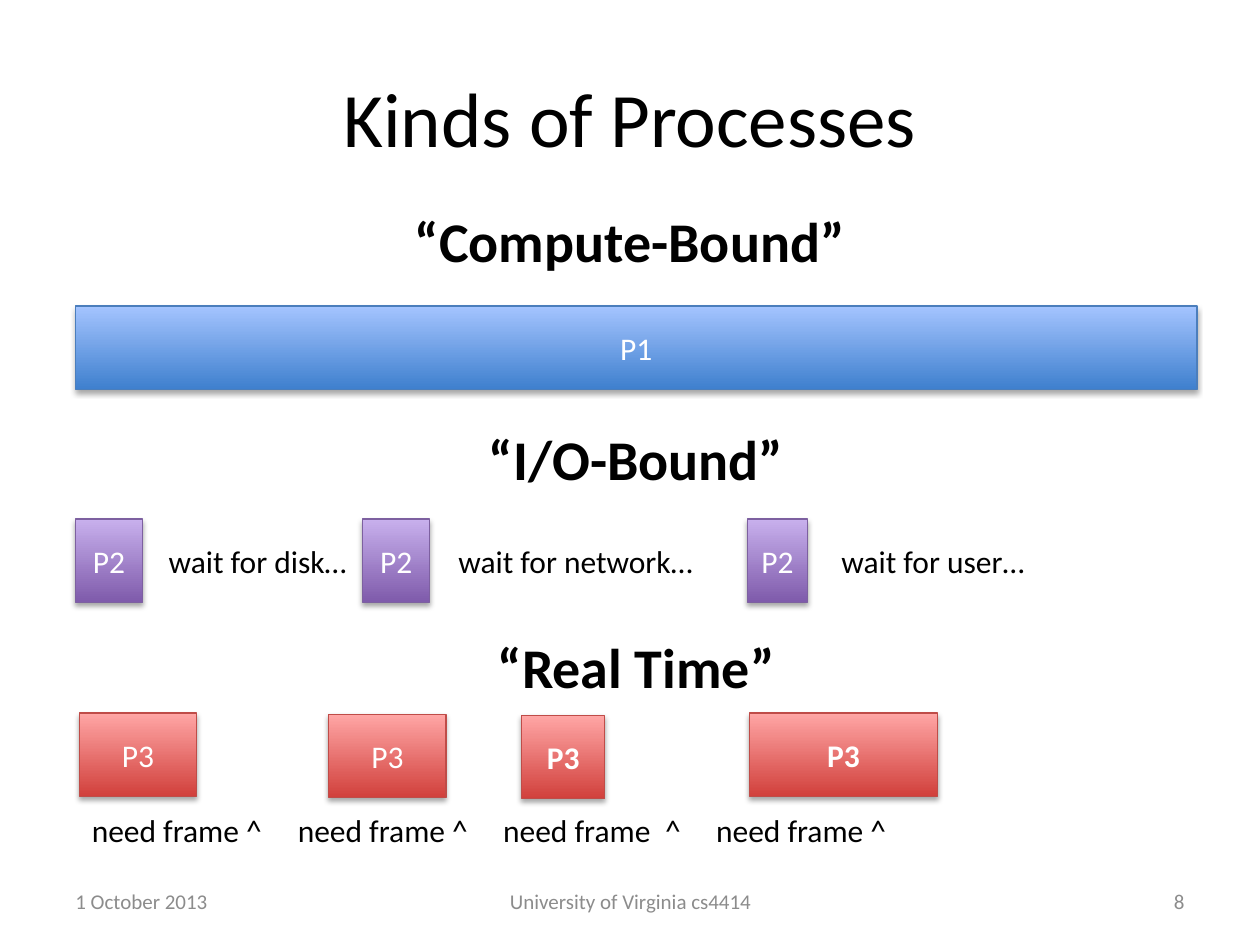
"""Build the slide on three kinds of processes, on a grid of 100 columns by 75 rows."""
from lxml.etree import SubElement
from pptx import Presentation
from pptx.dml.color import RGBColor
from pptx.enum.shapes import MSO_SHAPE
from pptx.enum.text import MSO_ANCHOR, PP_ALIGN
from pptx.oxml.ns import qn
from pptx.util import Inches, Pt

deck = Presentation()
deck.slide_width, deck.slide_height = Inches(10), Inches(7.5)
col, row = deck.slide_width / 100, deck.slide_height / 75
slide = deck.slides.add_slide(deck.slide_layouts[6])
LEFT, MID, RIGHT = PP_ALIGN.LEFT, PP_ALIGN.CENTER, PP_ALIGN.RIGHT
TOP, CENTER = MSO_ANCHOR.TOP, MSO_ANCHOR.MIDDLE


def tint(color, value):
    color.rgb = RGBColor.from_string(value)


def write(shape, text, size, color="000000", align=LEFT, anchor=TOP, bold=False):
    frame = shape.text_frame
    frame.word_wrap = True
    frame.vertical_anchor = anchor
    para = frame.paragraphs[0]
    para.text = text
    para.alignment = align
    font = para.font
    font.name, font.size, font.bold = "Calibri", Pt(size), bold
    tint(font.color, color)
    return para


gray = "8C8C8C"
texts = [
    (5, 3, 90, 12.5, "Kinds of Processes", 44, "000000", MID, CENTER),
    (5, 15.9, 90, 6.9, "“Compute-Bound”", 32, "000000", MID, TOP, True),
    (6, 33.2, 89, 6.9, "“I/O-Bound”", 32, "000000", MID, TOP, True),
    (6, 49.7, 89, 6.9, "“Real Time”", 32, "000000", MID, TOP, True),
    (12.4, 42.5, 20.2, 4, "wait for disk…", 18),
    (35.4, 42.5, 25.6, 4, "wait for network…", 18),
    (65.8, 42.5, 25.6, 4, "wait for user…", 18),
    (5, 69.5, 23.3, 4, "1 October 2013", 12, gray, LEFT, CENTER),
    (34.2, 69.5, 31.7, 4, "University of Virginia cs4414", 12, gray, MID, CENTER),
    (71.7, 69.5, 23.3, 4, "8", 12, gray, RIGHT, CENTER),
]
for x, y, w, h, *style in texts:
    box = slide.shapes.add_textbox(int(x * col), int(y * row), int(w * col), int(h * row))
    write(box, *style)

box = slide.shapes.add_textbox(int(6.3 * col), int(63.9 * row), int(74.9 * col), int(4 * row))
para = write(box, "need frame ^\tneed frame ^\tneed frame\t^\tneed frame ^", 18)
tabs = SubElement(para._p.get_or_add_pPr(), qn("a:tabLst"))
for stop in (16.35, 32.65, 45.5, 49.55):
    SubElement(tabs, qn("a:tab"), pos=str(int(stop * col)), algn="l")

looks = {
    "P1": ("3F80CE", "A4C4FF", "4B7EBC"),
    "P2": ("7F5BAB", "C8B0ED", "7D60A0"),
    "P3": ("D1403C", "FFA6A5", "BF4C48"),
}
bars = [
    ("P1", 6, 24.3, 89, False),
    ("P2", 6, 41.2, 5.3, False),
    ("P2", 28.8, 41.2, 5.3, False),
    ("P2", 59.3, 41.2, 4.8, False),
    ("P3", 6.3, 56.6, 9.3, False),
    ("P3", 26.1, 56.7, 9.3, False),
    ("P3", 41.4, 56.8, 6.6, True),
    ("P3", 59.5, 56.6, 14.9, True),
]
for name, x, y, w, bold in bars:
    bar = slide.shapes.add_shape(
        MSO_SHAPE.RECTANGLE, int(x * col), int(y * row), int(w * col), int(6.6 * row))
    dark, light, edge = looks[name]
    bar.fill.gradient()
    bar.fill.gradient_angle = 90
    for stop, shade in zip(bar.fill.gradient_stops, (dark, light)):
        tint(stop.color, shade)
    tint(bar.line.color, edge)
    bar.line.width = Pt(0.75)
    bar.shadow.inherit = False
    cast = SubElement(
        bar._element.spPr.find(qn("a:effectLst")), qn("a:outerShdw"),
        blurRad=str(Pt(3.1)), dist=str(Pt(1.8)), dir="5400000", rotWithShape="0")
    black = SubElement(cast, qn("a:srgbClr"), val="000000")
    SubElement(black, qn("a:alpha"), val="35000")
    write(bar, name, 18, "FFFFFF", MID, CENTER, bold)

deck.save("out.pptx")
